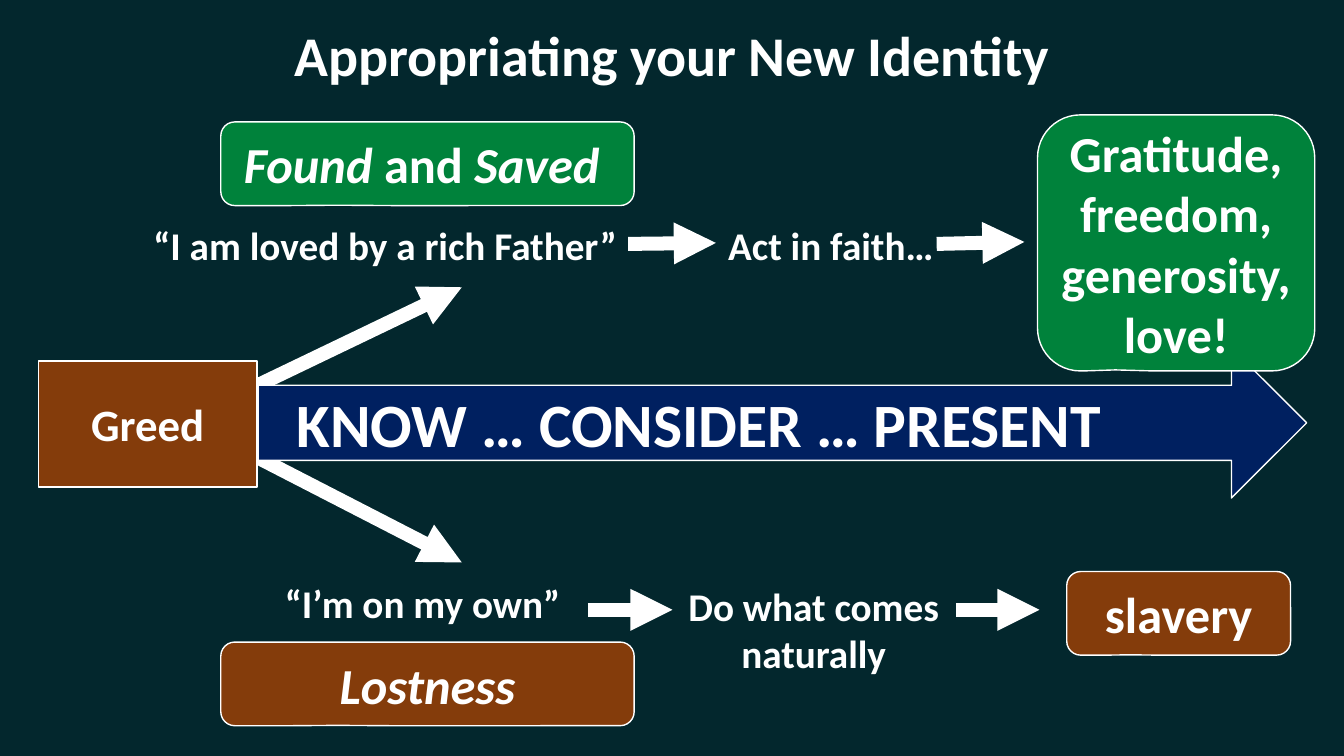
from lxml import etree
from pptx import Presentation
from pptx.dml.color import RGBColor
from pptx.enum.shapes import MSO_CONNECTOR, MSO_SHAPE
from pptx.enum.text import MSO_ANCHOR, PP_ALIGN
from pptx.oxml.ns import qn
from pptx.util import Inches, Pt

BACKGROUND = RGBColor(0x03, 0x27, 0x2D)
WHITE = RGBColor(0xFF, 0xFF, 0xFF)
BROWN = RGBColor(0x84, 0x3C, 0x0B)
GREEN = RGBColor(0x00, 0x82, 0x3B)
NAVY = RGBColor(0x00, 0x20, 0x60)

STRAIGHT = MSO_CONNECTOR.STRAIGHT
CALLOUT = MSO_SHAPE.ROUNDED_RECTANGULAR_CALLOUT
RECTANGLE = MSO_SHAPE.RECTANGLE
RIGHT_ARROW = MSO_SHAPE.RIGHT_ARROW
MIDDLE = MSO_ANCHOR.MIDDLE
LEFT, CENTER = PP_ALIGN.LEFT, PP_ALIGN.CENTER

CALLOUT_ADJUSTMENTS = (-0.219, 0.496, 0.167)

# Arrow ends: x1, y1, x2, y2
ARROWS = [
    (2.54, 4.53, 4.58, 5.58),
    (2.54, 3.83, 4.58, 2.85),
    (5.83, 6.05, 6.67, 6.05),
    (9.48, 6.05, 10.31, 6.05),
    (6.23, 2.42, 7.1, 2.41),
    (9.29, 2.42, 10.16, 2.4),
]

# Callouts: box, text size, fill, runs as (text, italic)
CALLOUTS = [
    # Title
    ((1.83, 0.08, 9.67, 0.92), 40, None, [("Appropriating your New Identity", False)]),
    # Upper path
    ((2.19, 1.21, 4.1, 0.83), 36, GREEN,
     [("Found", True), (" and ", False), ("Saved ", True)]),
    ((1.34, 1.97, 4.96, 0.92), 28, None, [("“I am loved by a rich Father”", False)]),
    ((6.47, 1.75, 3.54, 1.35), 28, None, [("Act in faith…", False)]),
    ((10.29, 1.14, 2.75, 2.54), 36, GREEN,
     [("Gratitude, freedom, generosity, love!", False)]),
    # Lower path
    ((2.19, 6.37, 4.1, 0.83), 36, BROWN, [("Lostness", True)]),
    ((2.32, 5.52, 3.83, 0.92), 28, None, [("“I’m on my own” ", False)]),
    ((6.3, 5.57, 3.54, 1.35), 28, None, [("Do what comes naturally", False)]),
    ((10.58, 5.67, 2.22, 0.83), 36, BROWN, [("slavery", False)]),
]


def add_arrow(s, ends):
    line = s.shapes.add_connector(STRAIGHT, *map(Inches, ends))
    line.line.color.rgb = WHITE
    line.line.width = Pt(10)
    ln = line.line._get_or_add_ln()
    etree.SubElement(ln, qn("a:tailEnd"), type="triangle")
    etree.SubElement(line._element.spPr, qn("a:effectLst"))


def add_box(s, kind, box, size, fill, runs, align=CENTER):
    sp = s.shapes.add_shape(kind, *map(Inches, box))
    sp.shadow.inherit = False
    if fill is None:
        sp.fill.background()
        sp.line.fill.background()
    else:
        sp.fill.solid()
        sp.fill.fore_color.rgb = fill
        sp.line.color.rgb = WHITE
        sp.line.width = Pt(1)

    tf = sp.text_frame
    tf.word_wrap = True
    tf.vertical_anchor = MIDDLE
    p = tf.paragraphs[0]
    p.alignment = align
    for text, italic in runs:
        r = p.add_run()
        r.text = text
        font = {"name": "Calibri", "size": Pt(size), "bold": True, "italic": italic}
        for key, value in font.items():
            setattr(r.font, key, value)
        r.font.color.rgb = WHITE
    return sp


def add_callout(s, box, size, fill, runs):
    sp = add_box(s, CALLOUT, box, size, fill, runs)
    for i, value in enumerate(CALLOUT_ADJUSTMENTS):
        sp.adjustments[i] = value


def main():
    prs = Presentation()
    prs.slide_width, prs.slide_height = Inches(13.33), Inches(7.5)
    s = prs.slides.add_slide(prs.slide_layouts[6])
    s.background.fill.solid()
    s.background.fill.fore_color.rgb = BACKGROUND

    # White arrows, behind the boxes
    for ends in ARROWS:
        add_arrow(s, ends)

    # Starting point and main arrow
    add_box(s, RECTANGLE, (0.38, 3.58, 2.17, 1.25), 32, BROWN, [("Greed", False)])
    steps = add_box(s, RIGHT_ARROW, (2.56, 3.45, 10.4, 1.49), 44, NAVY,
                    [("KNOW … CONSIDER … PRESENT", False)], LEFT)
    steps.text_frame.margin_left = Inches(0.38)

    # Title and the two paths
    for callout in CALLOUTS:
        add_callout(s, *callout)

    prs.save("out.pptx")


if __name__ == "__main__":
    main()
